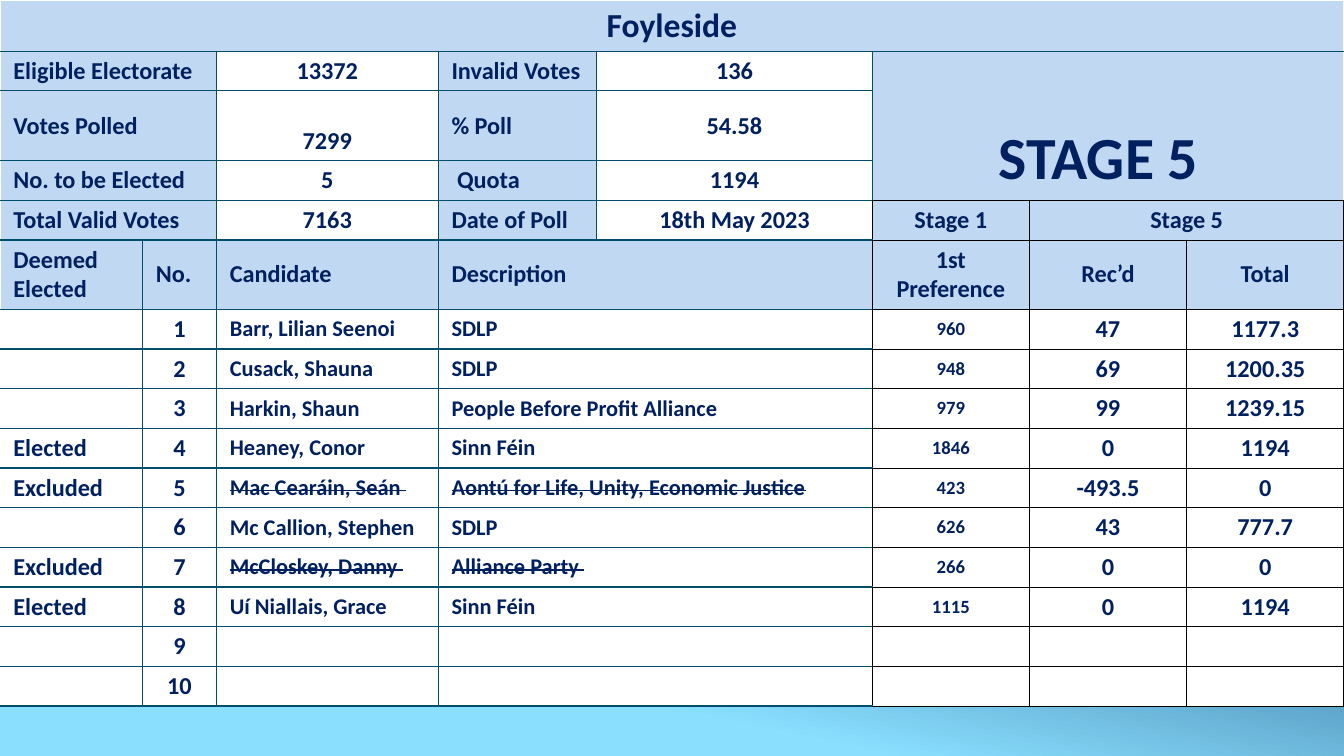
from lxml import etree
from pptx import Presentation
from pptx import util as u
from pptx.dml.color import RGBColor
from pptx.enum import text
from pptx.oxml import ns

HEX = {"navy": "002060", "pale": "C1D8F2", "white": "FFFFFF", "teal": "004E6C",
       "black": "000000", "deep": "0D3868", "sky": "8ADFFF"}
WIDTH = {"white": 1, "teal": 0.75, "black": 0.5}
MID, LOW = text.MSO_ANCHOR.MIDDLE, text.MSO_ANCHOR.BOTTOM
PAD, GAP = u.Inches(0.1), u.Inches(0.15) // 4

# Widescreen slide, 16 to 9
prs = Presentation()
prs.slide_width = u.Inches(10)
prs.slide_height = u.Inches(10) * 9 // 16
slide = prs.slides.add_slide(prs.slide_layouts[6])

# Background gradient
back = slide.background.fill
back.gradient()
back.gradient_angle = 258
for stop, (spot, hue) in zip(back.gradient_stops, [(0.42, "deep"), (0.82, "sky")]):
    stop.position = spot
    stop.color.rgb = RGBColor.from_string(HEX[hue])

# Table grid
cols = [1.06, 0.55, 1.65, 1.18, 2.05, 1.17, 1.17, 1.17]
rows = [0.37, 0.28, 0.52, 0.28, 0.28, 0.48] + [0.28] * 10
frame = slide.shapes.add_table(len(rows), len(cols), 0, 0, u.Inches(10), u.Inches(5.18))
table = frame.table
table.first_row = table.horz_banding = False
for col, wide in zip(table.columns, cols):
    col.width = u.Inches(wide)
for row, high in zip(table.rows, rows):
    row.height = u.Inches(high)
frame.height = u.Inches(5.18)


def write(para, words, size, strike=False):
    run = para.add_run()
    run.text = words
    look = {"name": "Calibri", "size": u.Pt(size), "bold": True}
    for key, val in look.items():
        setattr(run.font, key, val)
    run.font.color.rgb = RGBColor.from_string(HEX["navy"])
    if strike:
        run.font._element.set("strike", "sngStrike")


def put(r, c, words, fill="white", size=13, mid=True, wide=1, tall=1,
        anchor=MID, strike=False, edge=None):
    cell = table.cell(r, c)
    if wide * tall > 1:
        cell.merge(table.cell(r + tall - 1, c + wide - 1))
    # Borders: teal on the left block, black on the stage columns
    side = dict.fromkeys("LRTB", "black" if c > 4 else "teal")
    if c == 0:
        side["L"] = "white"
    if r > 3 and c + wide == 5:
        side["R"] = "black"
    side.update(edge or {})
    props = cell._tc.get_or_add_tcPr()
    for key, hue in side.items():
        line = etree.SubElement(props, ns.qn("a:ln" + key), w=str(u.Pt(WIDTH[hue])))
        solid = etree.SubElement(line, ns.qn("a:solidFill"))
        etree.SubElement(solid, ns.qn("a:srgbClr"), val=HEX[hue])
    cell.fill.solid()
    cell.fill.fore_color.rgb = RGBColor.from_string(HEX[fill])
    form = {"vertical_anchor": anchor, "margin_left": PAD, "margin_right": PAD,
            "margin_top": GAP, "margin_bottom": GAP}
    for key, val in form.items():
        setattr(cell, key, val)
    para = cell.text_frame.paragraphs[0]
    if mid:
        para.alignment = text.PP_ALIGN.CENTER
    if words:
        write(para, words, size, strike)
    return para


# Title and stage banner
put(0, 0, "Foyleside", "pale", 18, wide=8, edge={"L": "white", "T": "white", "R": "white", "B": "teal"})
stage = put(1, 5, "STAGE 5 ", "pale", 32, wide=3, tall=3, anchor=LOW,
            edge={"L": "teal", "T": "teal", "R": "white"})
write(stage, " ", 13)

# Poll summary
facts = [("Eligible Electorate", "13372", "Invalid Votes", "136"),
         ("Votes Polled", "7299", "% Poll", "54.58"),
         ("No. to be Elected", "5", " Quota", "1194"),
         ("Total Valid Votes", "7163", "Date of Poll", "18th May 2023")]
for r, (name, count, label, value) in enumerate(facts, 1):
    put(r, 0, name, "pale", mid=False, wide=2)
    put(r, 2, count, anchor=LOW if r == 2 else MID)
    put(r, 3, label, "pale", mid=False)
    put(r, 4, value)

# Column heads
put(4, 5, "Stage 1", "pale")
put(4, 6, "Stage 5", "pale", wide=2)
heads = [(0, "Deemed Elected"), (1, "No."), (2, "Candidate"), (3, "Description"),
         (5, "1st Preference"), (6, "Rec’d"), (7, "Total")]
for c, head in heads:
    put(5, c, head, "pale", mid=c > 4, wide=2 if c == 3 else 1)

# Candidates
people = [("", "Barr, Lilian Seenoi", "SDLP", "960", "47", "1177.3"),
          ("", "Cusack, Shauna", "SDLP", "948", "69", "1200.35"),
          ("", "Harkin, Shaun", "People Before Profit Alliance", "979", "99", "1239.15"),
          ("Elected", "Heaney, Conor", "Sinn Féin", "1846", "0", "1194"),
          ("Excluded", "Mac Cearáin, Seán ", "Aontú for Life, Unity, Economic Justice",
           "423", "-493.5", "0"),
          ("", "Mc Callion, Stephen", "SDLP", "626", "43", "777.7"),
          ("Excluded", "McCloskey, Danny ", "Alliance Party ", "266", "0", "0"),
          ("Elected", "Uí Niallais, Grace", "Sinn Féin", "1115", "0", "1194"),
          ("",) * 6, ("",) * 6]
for num, (state, name, party, first, recd, total) in enumerate(people, 1):
    r = num + 5
    out = state == "Excluded"
    put(r, 0, state, mid=False)
    put(r, 1, str(num))
    put(r, 2, name, size=12, mid=False, strike=out)
    put(r, 3, party, size=12, mid=False, wide=2, strike=out)
    put(r, 5, first, size=10)
    put(r, 6, recd)
    put(r, 7, total)

# Small type in empty cells keeps the rows low
for cell in table.iter_cells():
    if not cell.text_frame.text:
        etree.SubElement(cell.text_frame.paragraphs[0]._p, ns.qn("a:endParaRPr"), sz="1000")

prs.save("out.pptx")
